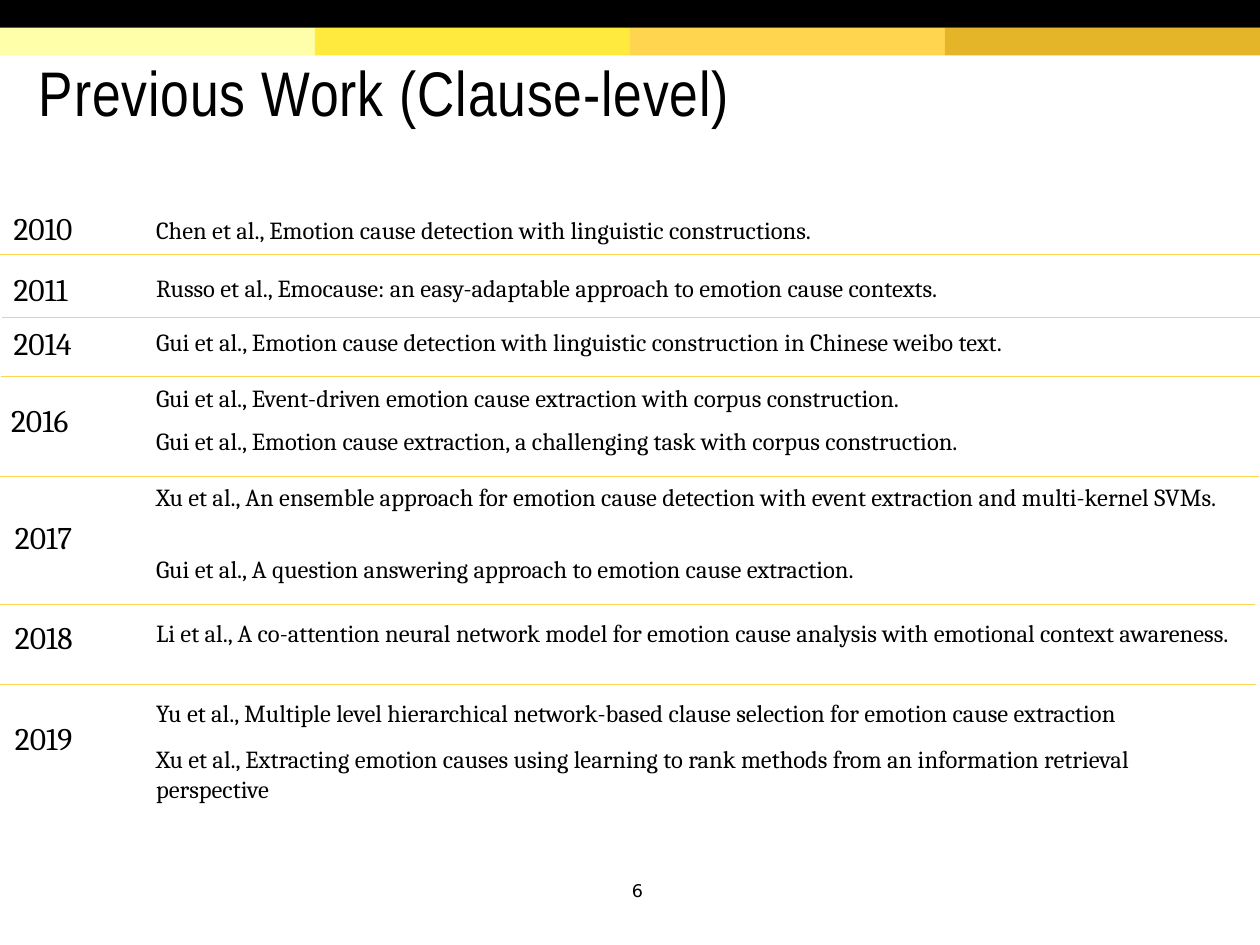
import pptx
import pptx.dml.color
import pptx.enum.shapes
import pptx.enum.text
import pptx.oxml
import pptx.oxml.ns
import pptx.util

Inches = pptx.util.Inches
Align = pptx.enum.text.PP_ALIGN
Anchor = pptx.enum.text.MSO_ANCHOR

BLACK = "000000"
RULE = "FFD54F"
BANDS = ["FFFFAA", "FFEA3D", "FFD54F", "E4B429"]
BAND_HEIGHT = 0.22
SLIDE_WIDTH, SLIDE_HEIGHT = 10, 7.5
PAPER_LEFT = 1.14

TITLE = "Previous Work (Clause-level)"
PAGE = "6"

# year, (left, top) of the year, papers as (top, width, height, text)
TIMELINE = [
    ("2010", (0.01, 1.61), [
        (1.66, 6.36, 0.34, "Chen et al., Emotion cause detection with linguistic constructions.")]),
    ("2011", (0.01, 2.09), [
        (2.12, 8.98, 0.34, "Russo et al., Emocause: an easy-adaptable approach to emotion cause contexts.")]),
    ("2014", (0.01, 2.52), [
        (2.55, 8.09, 0.34, "Gui et al., Emotion cause detection with linguistic construction in Chinese weibo text.")]),
    ("2016", (-0.01, 3.13), [
        (2.99, 8.34, 0.34, "Gui et al., Event-driven emotion cause extraction with corpus construction."),
        (3.33, 8.74, 0.34, "Gui et al., Emotion cause extraction, a challenging task with corpus construction.")]),
    ("2017", (0.02, 4.06), [
        (3.78, 8.74, 0.57, "Xu et al., An ensemble approach for emotion cause detection with event extraction and multi-kernel SVMs."),
        (4.35, 8.56, 0.34, "Gui et al., A question answering approach to emotion cause extraction.")]),
    ("2018", (0.02, 4.86), [
        (4.86, 8.97, 0.57, "Li et al., A co-attention neural network model for emotion cause analysis with emotional context awareness.")]),
    ("2019", (0.02, 5.66), [
        (5.49, 8.64, 0.34, "Yu et al., Multiple level hierarchical network-based clause selection for emotion cause extraction"),
        (5.86, 8.56, 0.57, "Xu et al., Extracting emotion causes using learning to rank methods from an information retrieval perspective")]),
]
# left, height on the slide
RULES = [(0, 2.02), (0.02, 2.52), (0.01, 2.99), (-0.01, 3.78), (-0.04, 4.8), (-0.03, 5.43)]


def color(hex_value):
    return pptx.dml.color.RGBColor.from_string(hex_value)


def add_band(slide, left, top, width, fill):
    band = slide.shapes.add_shape(
        pptx.enum.shapes.MSO_SHAPE.RECTANGLE,
        Inches(left), Inches(top), Inches(width), Inches(BAND_HEIGHT))
    band.shadow.inherit = False
    band.fill.solid()
    band.fill.fore_color.rgb = color(fill)
    band.line.fill.background()


def add_rule(slide, left, top):
    rule = slide.shapes.add_connector(
        pptx.enum.shapes.MSO_CONNECTOR.STRAIGHT,
        Inches(left), Inches(top), Inches(left + SLIDE_WIDTH), Inches(top))
    rule.line.color.rgb = color(RULE)
    rule.line.width = pptx.util.Pt(0.5)
    rule._element.spPr.append(pptx.oxml.parse_xml(
        f"<a:effectLst {pptx.oxml.ns.nsdecls('a')}/>"))


def add_text(slide, box, text, size, font="Cambria", wrap=True, grow=True,
             align=Align.LEFT, anchor=Anchor.TOP):
    """Add a one-run text box and return its paragraph and run."""
    frame = slide.shapes.add_textbox(*map(Inches, box)).text_frame
    frame.word_wrap = wrap
    if grow:
        frame.auto_size = pptx.enum.text.MSO_AUTO_SIZE.SHAPE_TO_FIT_TEXT
    frame.vertical_anchor = anchor
    paragraph = frame.paragraphs[0]
    paragraph.alignment = align
    run = paragraph.add_run()
    run.text = text
    run.font.name = font
    run.font.size = pptx.util.Pt(size)
    run.font.color.rgb = color(BLACK)
    return paragraph, run


def main():
    deck = pptx.Presentation()
    deck.slide_width = Inches(SLIDE_WIDTH)
    deck.slide_height = Inches(SLIDE_HEIGHT)
    slide = deck.slides.add_slide(deck.slide_layouts[6])

    band_width = SLIDE_WIDTH / len(BANDS)
    for index, fill in enumerate(BANDS):
        add_band(slide, index * band_width, BAND_HEIGHT, band_width, fill)
    add_band(slide, 0, 0, SLIDE_WIDTH, BLACK)

    title, title_run = add_text(slide, (0.21, 0.47, 9.49, 0.98), TITLE, 36,
                                font="Arial Narrow", grow=False)
    title.line_spacing = 0.85
    title_run._r.get_or_add_rPr().set("spc", "50")

    for left, top in RULES:
        add_rule(slide, left, top)

    for year, (year_left, year_top), papers in TIMELINE:
        add_text(slide, (year_left, year_top, 0.75, 0.4), year, 18, wrap=False)
        for top, width, height, paper in papers:
            add_text(slide, (PAPER_LEFT, top, width, height), paper, 14)

    add_text(slide, (4.58, 6.93, 0.96, 0.27), PAGE, 10, font="DejaVu Sans",
             grow=False, align=Align.CENTER, anchor=Anchor.MIDDLE)

    deck.save("out.pptx")


if __name__ == "__main__":
    main()
